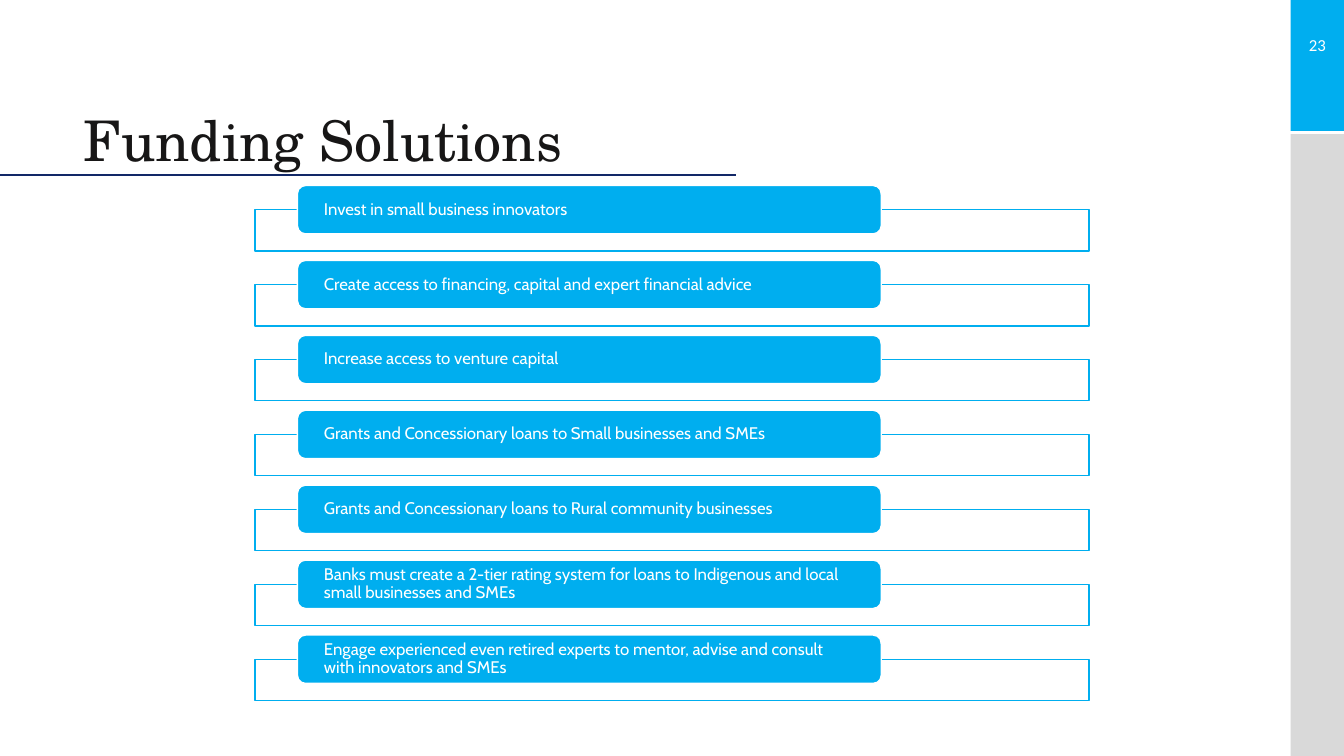
from lxml import etree
from pptx import Presentation
from pptx.dml.color import RGBColor
from pptx.enum.shapes import MSO_CONNECTOR, MSO_SHAPE
from pptx.enum.text import MSO_ANCHOR, PP_ALIGN
from pptx.oxml.ns import qn
from pptx.util import Inches, Pt

RECTANGLE = MSO_SHAPE.RECTANGLE
ROUNDED = MSO_SHAPE.ROUNDED_RECTANGLE
STRAIGHT = MSO_CONNECTOR.STRAIGHT
MIDDLE = MSO_ANCHOR.MIDDLE
BOTTOM = MSO_ANCHOR.BOTTOM
LEFT = PP_ALIGN.LEFT
CENTER = PP_ALIGN.CENTER

BLUE = RGBColor(0x00, 0xAE, 0xEF)
GRAY = RGBColor(0xD9, 0xD9, 0xD9)
NAVY = RGBColor(0x12, 0x28, 0x67)
INK = RGBColor(0x17, 0x16, 0x16)
WHITE = RGBColor(0xFF, 0xFF, 0xFF)

SOLUTIONS = [
    "Invest in small business innovators",
    "Create access to financing, capital and expert financial advice",
    "Increase access to venture capital",
    "Grants and Concessionary loans to Small businesses and SMEs",
    "Grants and Concessionary loans to Rural community businesses",
    "Banks must create a 2-tier rating system for loans to Indigenous and local small businesses and SMEs",
    "Engage experienced even retired experts to mentor, advise and consult with innovators and SMEs",
]
FIRST_TOP = 1.84
LAST_TOP = 6.3
FRAME_DROP = 0.24


class SlideBuilder:
    title_font = "TeX Gyre Schola"
    label_font = "Cabin"
    number_font = "Calibri"

    def __init__(self, page):
        self.page = page

    def shape(self, kind, left, top, width, height, fill, line=None):
        box = self.page.shapes.add_shape(
            kind, Inches(left), Inches(top), Inches(width), Inches(height))
        box.shadow.inherit = False
        box.fill.solid()
        box.fill.fore_color.rgb = fill
        if line is None:
            box.line.fill.background()
        else:
            box.line.color.rgb = line
            box.line.width = Pt(1)
        return box

    def frame(self, left, top, width, height):
        box = self.shape(RECTANGLE, left, top, width, height, WHITE, BLUE)
        color = box._element.spPr.find(qn("a:solidFill"))[0]
        etree.SubElement(color, qn("a:alpha"), val="90000")

    def rule(self, left, right, y):
        line = self.page.shapes.add_connector(
            STRAIGHT, Inches(left), Inches(y), Inches(right), Inches(y))
        line.line.color.rgb = NAVY
        line.line.width = Pt(1.5)
        etree.SubElement(line._element.spPr, qn("a:effectLst"))

    def set_text(self, box, text, font, size, color, anchor, align=LEFT, spacing=0.9):
        frame = box.text_frame
        frame.word_wrap = True
        frame.vertical_anchor = anchor
        para = frame.paragraphs[0]
        para.text = text
        para.alignment = align
        para.line_spacing = spacing
        para.font.name = font
        para.font.size = Pt(size)
        para.font.color.rgb = color

    def text(self, left, top, width, height, *style):
        box = self.page.shapes.add_textbox(
            Inches(left), Inches(top), Inches(width), Inches(height))
        self.set_text(box, *style)

    def label(self, left, top, width, height, text):
        box = self.shape(ROUNDED, left, top, width, height, BLUE, WHITE)
        frame = box.text_frame
        frame.margin_left = frame.margin_right = Inches(0.24)
        frame.margin_top = frame.margin_bottom = 0
        self.set_text(box, text, self.label_font, 12, WHITE, MIDDLE)


def main():
    deck = Presentation()
    deck.slide_width = Inches(13.33)
    deck.slide_height = Inches(7.5)
    slide = SlideBuilder(deck.slides.add_slide(deck.slide_layouts[6]))

    slide.shape(RECTANGLE, 12.8, 0, 0.53, 1.3, BLUE)
    slide.shape(RECTANGLE, 12.8, 1.33, 0.53, 6.17, GRAY)
    slide.text(12.74, 0.29, 0.65, 0.3, "23", slide.number_font, 12, WHITE,
               MIDDLE, CENTER, 1.0)
    slide.rule(0, 7.3, 1.74)
    slide.text(0.73, 0.76, 6.4, 1.01, "Funding Solutions", slide.title_font, 40,
               INK, BOTTOM)

    pitch = (LAST_TOP - FIRST_TOP) / (len(SOLUTIONS) - 1)
    for index, solution in enumerate(SOLUTIONS):
        top = FIRST_TOP + index * pitch
        slide.frame(2.53, top + FRAME_DROP, 8.27, 0.41)
        slide.label(2.95, top, 5.79, 0.48, solution)

    deck.save("out.pptx")


if __name__ == "__main__":
    main()
